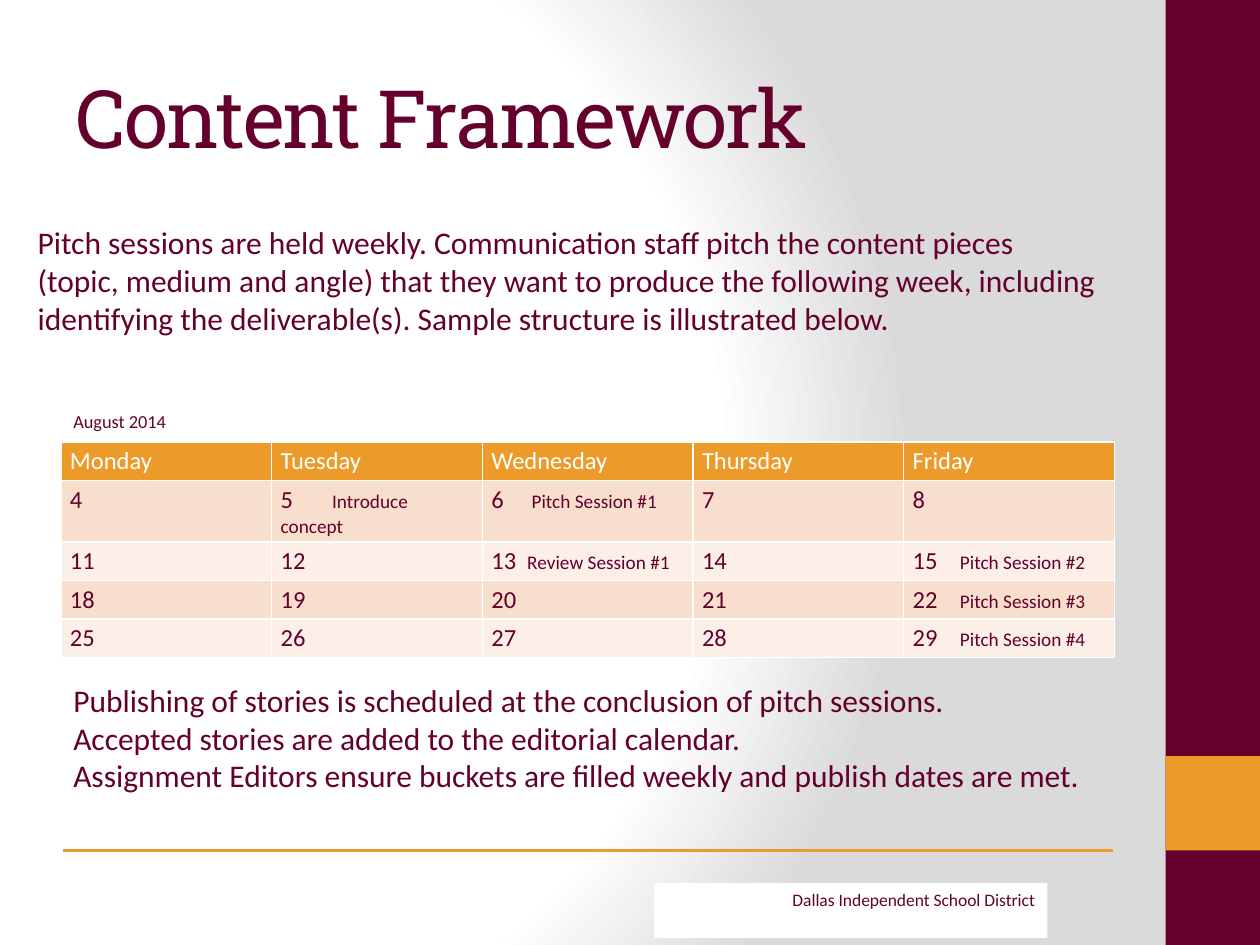
"""Build the Content Framework slide with its pitch session calendar."""
from lxml import etree
from pptx import Presentation
from pptx.dml.color import RGBColor
from pptx.enum.shapes import MSO_CONNECTOR as CONN, MSO_SHAPE as SHAPE
from pptx.enum.text import MSO_ANCHOR as ANCHOR, PP_ALIGN as ALIGN
from pptx.oxml import parse_xml
from pptx.oxml.ns import nsdecls, qn
from pptx.util import Pt

MAROON = RGBColor(0x65, 0x00, 0x2D)
ORANGE = RGBColor(0xEC, 0x9A, 0x29)
WHITE = RGBColor(0xFF, 0xFF, 0xFF)
PEACH = RGBColor(0xF8, 0xDE, 0xCD)
CREAM = RGBColor(0xFB, 0xEF, 0xE8)


def add_run(p, text, size, color=MAROON, name="Calibri"):
    r = p.add_run()
    r.text = text
    for key, value in {"size": Pt(size), "name": name}.items():
        setattr(r.font, key, value)
    r.font.color.rgb = color
    return r


def add_text(box, lines, size, anchor=ANCHOR.TOP, align=ALIGN.LEFT, name="Calibri"):
    tf = box.text_frame
    for key, value in {"word_wrap": True, "vertical_anchor": anchor}.items():
        setattr(tf, key, value)
    for i, line in enumerate(lines):
        p = tf.add_paragraph() if i else tf.paragraphs[0]
        p.alignment = align
        r = add_run(p, line, size, name=name)
    return r


prs = Presentation()
prs.slide_width, prs.slide_height = Pt(720), Pt(540)
s = prs.slides.add_slide(prs.slide_layouts[6])

s.background.fill.gradient()
grad = next(s._element.iter(qn("a:gradFill")))
stops = "".join(
    f'<a:gs pos="{pos * 1000}"><a:srgbClr val="{color}"/></a:gs>'
    for pos, color in [(0, "FFFFFF"), (75, "FFFFFF"), (100, "DADADA")]
)
grad.getparent().replace(grad, parse_xml(
    f'<a:gradFill {nsdecls("a")} rotWithShape="1"><a:gsLst>{stops}</a:gsLst>'
    '<a:path path="circle"><a:fillToRect l="20000" t="50000" r="100000" b="50000"/>'
    '</a:path></a:gradFill>'))

for x, y, w, h, color in [
    (666, 0, 54, 540, MAROON),
    (666, 432, 54, 54, ORANGE),
    (374, 504.5, 224.5, 31.5, WHITE),
]:
    sp = s.shapes.add_shape(SHAPE.RECTANGLE, Pt(x), Pt(y), Pt(w), Pt(h))
    sp.shadow.inherit = False
    sp.fill.solid()
    sp.fill.fore_color.rgb = color
    sp.line.fill.background()
add_text(sp, ["Dallas Independent School District"], 10, align=ALIGN.RIGHT)

rule = s.shapes.add_connector(CONN.STRAIGHT, Pt(636), Pt(486), Pt(36), Pt(486))
rule.line.color.rgb = ORANGE
rule.line.width = Pt(2)
etree.SubElement(rule._element.spPr, qn("a:effectLst"))

title = s.shapes.add_textbox(Pt(36), Pt(21.6), Pt(600), Pt(90))
r = add_text(title, ["Content Framework"], 46, ANCHOR.MIDDLE, name="Roboto Slab")
r._r.get_or_add_rPr().set("spc", "-100")

days = ["Monday", "Tuesday", "Wednesday", "Thursday", "Friday"]
notes = {
    5: ("Introduce concept", 29.4),
    6: ("Pitch Session #1", 23),
    13: ("Review Session #1", 20.5),
    15: ("Pitch Session #2", 27),
    22: ("Pitch Session #3", 27),
    29: ("Pitch Session #4", 27),
}
rows = [days] + [range(start, start + 5) for start in (4, 11, 18, 25)]
table = s.shapes.add_table(5, 5, Pt(34.8), Pt(252.5), Pt(602), Pt(108)).table
margins = {"margin_left": 5.2, "margin_right": 5.2, "margin_top": 2.6, "margin_bottom": 2.6}
for col in table.columns:
    col.width = Pt(120.4)
for i, row in enumerate(rows):
    table.rows[i].height = Pt(21.6)
    for j, entry in enumerate(row):
        cell = table.cell(i, j)
        for key, value in margins.items():
            setattr(cell, key, Pt(value))
        tcPr = cell._tc.get_or_add_tcPr()
        for side in ("lnL", "lnR", "lnT", "lnB"):
            tcPr.append(parse_xml(
                f'<a:{side} {nsdecls("a")} w="{Pt(1)}"><a:solidFill>'
                f'<a:srgbClr val="{WHITE}"/></a:solidFill></a:{side}>'))
        cell.fill.solid()
        cell.fill.fore_color.rgb = ORANGE if i == 0 else PEACH if i % 2 else CREAM
        p = cell.text_frame.paragraphs[0]
        if entry in notes:
            note, tab = notes[entry]
            tabs = etree.SubElement(p._p.get_or_add_pPr(), qn("a:tabLst"))
            etree.SubElement(tabs, qn("a:tab"), pos=str(Pt(tab)), algn="l")
        add_run(p, str(entry), 14, MAROON if i else WHITE)
        if entry in notes:
            add_run(p, "\t" + note, 11)

for x, y, w, h, size, lines in [
    (34.8, 231, 109.5, 20, 10.5, ["August 2014"]),
    (14.4, 124, 621.5, 72.7, 18, [
        "Pitch sessions are held weekly. Communication staff pitch the content pieces "
        "(topic, medium and angle) that they want to produce the following week, including "
        "identifying the deliverable(s). Sample structure is illustrated below."]),
    (34.8, 385.5, 645, 72.7, 18, [
        "Publishing of stories is scheduled at the conclusion of pitch sessions.",
        "Accepted stories are added to the editorial calendar.",
        "Assignment Editors ensure buckets are filled weekly and publish dates are met."]),
]:
    add_text(s.shapes.add_textbox(Pt(x), Pt(y), Pt(w), Pt(h)), lines, size)

prs.save("out.pptx")
